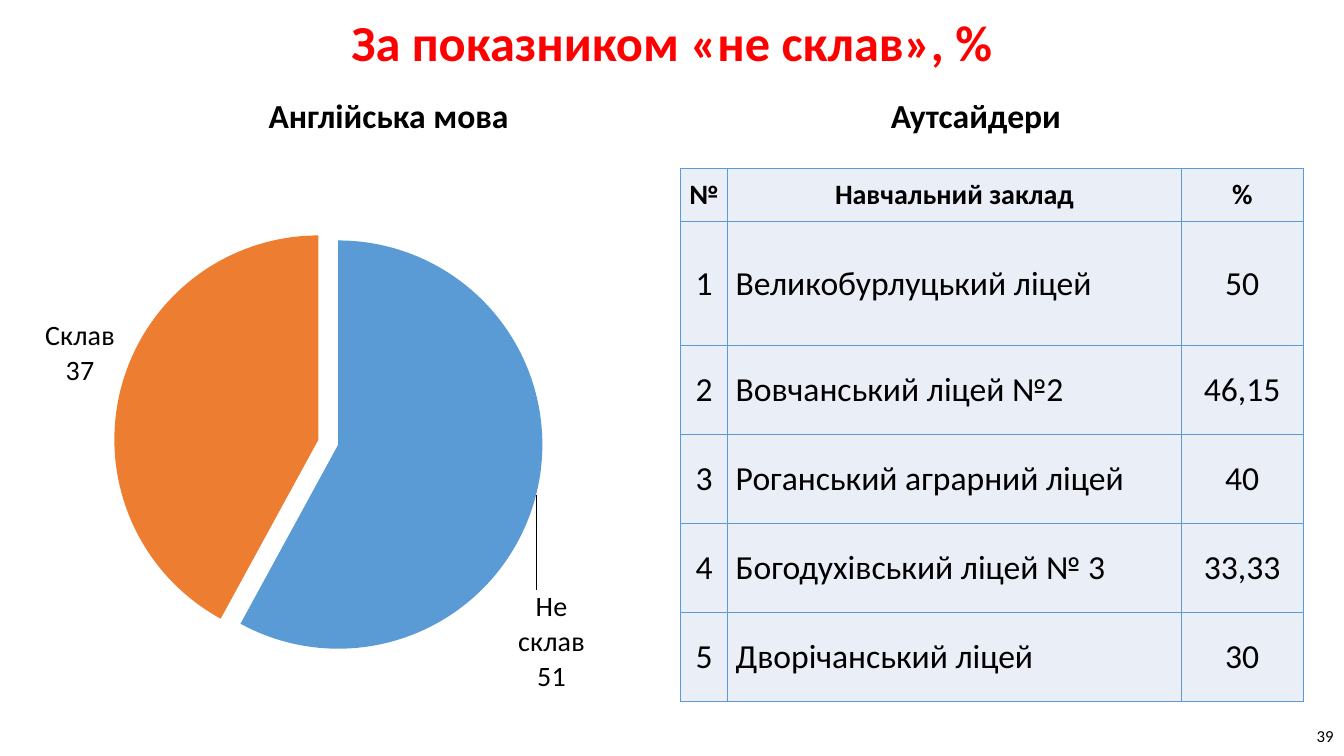
"""Build the slide on failed English results: a pie chart and a table of outsiders."""
from lxml.etree import SubElement
from pptx import Presentation
from pptx.chart.data import CategoryChartData
from pptx.dml.color import RGBColor
from pptx.enum.chart import XL_CHART_TYPE as ChartType, XL_LABEL_POSITION as LabelPosition
from pptx.enum.text import MSO_ANCHOR as Anchor, PP_ALIGN as Align
from pptx.oxml import parse_xml
from pptx.oxml.ns import nsdecls, qn
from pptx.util import Cm, Pt

RED = RGBColor(0xFF, 0x00, 0x00)
BLACK = RGBColor(0x00, 0x00, 0x00)
BLUE = RGBColor(0x5B, 0x9B, 0xD5)
ORANGE = RGBColor(0xED, 0x7D, 0x31)
PALE = RGBColor(0xEA, 0xEF, 0xF7)

OUTSIDERS = [
    ("№", "Навчальний заклад", "%"),
    ("1", "Великобурлуцький ліцей", "50"),
    ("2", "Вовчанський ліцей №2", "46,15"),
    ("3", "Роганський аграрний ліцей", "40"),
    ("4", "Богодухівський ліцей № 3", "33,33"),
    ("5", "Дворічанський ліцей", "30"),
]
COLUMN_WIDTHS = (1.19, 11.43, 3.07)
ROW_HEIGHTS = (1.35, 3.12) + (2.24,) * 4
RESULTS = {"Не склав": (51, BLUE), "Склав": (37, ORANGE)}


def set_font(font, size, color=BLACK, bold=False):
    font.name, font.size, font.bold = "Calibri", Pt(size), bold
    font.color.rgb = color


def write(frame, text, size=24, color=BLACK, bold=False, align=Align.CENTER, spacing=1.0):
    paragraph = frame.paragraphs[0]
    paragraph.alignment = align
    paragraph.line_spacing = spacing
    run = paragraph.add_run()
    run.text = text
    set_font(run.font, size, color, bold)


def show_name_and_value(labels):
    labels.find(qn("c:showCatName")).set("val", "1")
    separator = parse_xml(f"<c:separator {nsdecls('c')}>\n</c:separator>")
    flags = [flag for flag in labels if flag.tag.endswith(("showPercent", "showBubbleSize"))]
    flags[-1].addnext(separator)


def add_borders(cell):
    properties = cell._tc.get_or_add_tcPr()
    for index, side in enumerate("LRTB"):
        properties.insert(index, parse_xml(
            f'<a:ln{side} {nsdecls("a")} w="12700"><a:solidFill>'
            f'<a:srgbClr val="{BLUE}"/></a:solidFill></a:ln{side}>'))


class SlideBuilder:
    def __init__(self, slide):
        self.shapes = slide.shapes

    def text(self, text, left, top, width, height, anchor=Anchor.MIDDLE, **style):
        frame = self.shapes.add_textbox(Cm(left), Cm(top), Cm(width), Cm(height)).text_frame
        frame.word_wrap = True
        frame.vertical_anchor = anchor
        write(frame, text, **style)

    def table(self, rows, left, top):
        table = self.shapes.add_table(
            len(rows), len(COLUMN_WIDTHS), Cm(left), Cm(top),
            Cm(sum(COLUMN_WIDTHS)), Cm(sum(ROW_HEIGHTS))).table
        table.first_row = table.horz_banding = False
        for column, width in zip(table.columns, COLUMN_WIDTHS):
            column.width = Cm(width)
        for row, height in zip(table.rows, ROW_HEIGHTS):
            row.height = Cm(height)
        for r, values in enumerate(rows):
            for c, value in enumerate(values):
                cell = table.cell(r, c)
                cell.fill.solid()
                cell.fill.fore_color.rgb = PALE
                cell.vertical_anchor = Anchor.MIDDLE
                cell.margin_left = cell.margin_right = Cm(0.2)
                cell.margin_top = cell.margin_bottom = Cm(0.2)
                header = r == 0
                write(cell.text_frame, value, size=20 if header else 24, bold=header,
                      align=Align.LEFT if c == 1 and not header else Align.CENTER)
                add_borders(cell)

    def pie(self, results, left, top, width, height):
        data = CategoryChartData()
        data.categories = list(results)
        data.add_series("Series 1", [value for value, _ in results.values()])
        chart = self.shapes.add_chart(
            ChartType.PIE, Cm(left), Cm(top), Cm(width), Cm(height), data).chart
        chart.has_legend = chart.has_title = False
        set_font(chart.font, 18)
        plot = chart.plots[0]
        plot.vary_by_categories = True
        series = plot.series[0]
        for index, (_, color) in enumerate(results.values()):
            fill = series.points[index].format.fill
            fill.solid()
            fill.fore_color.rgb = color
        series._element.find(qn("c:dPt")).addprevious(
            parse_xml(f'<c:explosion {nsdecls("c")} val="5"/>'))
        labels = series.data_labels
        labels.show_value = True
        labels.position = LabelPosition.OUTSIDE_END
        set_font(labels.font, 20)
        show_name_and_value(labels._element)
        failed = series.points[0].data_label
        failed.position = LabelPosition.OUTSIDE_END
        set_font(failed.font, 20)
        failed_label = labels._element.find(qn("c:dLbl"))
        show_name_and_value(failed_label)
        failed_label.find(qn("c:idx")).addnext(self.layout(x=-0.04, y=0.17))
        area = chart._chartSpace.chart.plotArea
        for old in area.findall(qn("c:layout")):
            area.remove(old)
        area.insert(0, self.layout(
            layoutTarget="inner", xMode="edge", yMode="edge", x=0.139, y=0.037, w=0.727, h=0.927))

    @staticmethod
    def layout(**settings):
        layout = parse_xml(f"<c:layout {nsdecls('c')}><c:manualLayout/></c:layout>")
        for name, value in settings.items():
            SubElement(layout[0], qn(f"c:{name}")).set("val", str(value))
        return layout


def main():
    deck = Presentation()
    deck.slide_width, deck.slide_height = Cm(33.87), Cm(19.05)
    builder = SlideBuilder(deck.slides.add_slide(deck.slide_layouts[6]))
    builder.text("За показником «не склав», %", 2.33, 0.29, 29.21, 1.7,
                 size=36, color=RED, bold=True, spacing=0.9)
    for heading, left in (("Англійська мова", 2.62), ("Аутсайдери", 17.42)):
        builder.text(heading, left, 2.24, 14.35, 1.3, anchor=Anchor.BOTTOM,
                     bold=True, spacing=0.9)
    builder.text("39", 26.24, 18.03, 7.62, 1.02, size=12, align=Align.RIGHT)
    builder.table(OUTSIDERS, 17.15, 4.24)
    builder.pie(RESULTS, 0.81, 4.24, 14.86, 13.79)
    deck.save("out.pptx")


if __name__ == "__main__":
    main()
